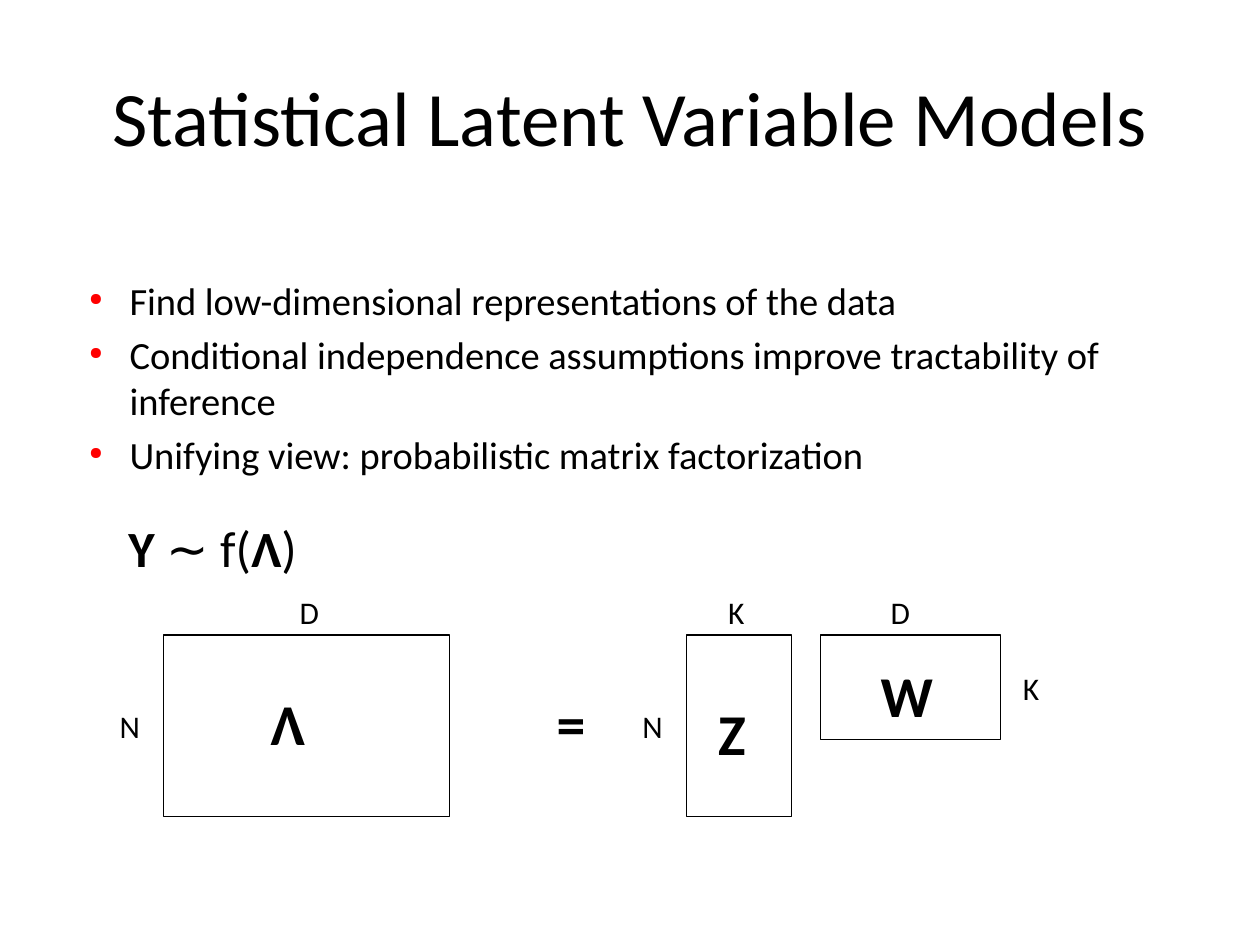
from lxml.etree import SubElement
from pptx import Presentation
from pptx.dml.color import RGBColor
from pptx.enum.shapes import MSO_SHAPE
from pptx.enum.text import MSO_ANCHOR, PP_ALIGN
from pptx.oxml.ns import qn
from pptx.util import Inches, Pt

BLACK = RGBColor(0, 0, 0)
WHITE = RGBColor(255, 255, 255)
BULLET_RED = RGBColor(255, 0, 0)
FONT = "Calibri"

POINTS = [
    "Find low-dimensional representations of the data",
    "Conditional independence assumptions improve tractability of inference",
    "Unifying view: probabilistic matrix factorization",
]
FORMULA = [("Y", True), (" ∼ f(", False), ("Λ", True), (")", False)]


def style(paragraph, size, bold=False):
    font = paragraph.font
    font.name, font.size, font.bold = FONT, Pt(size), bold
    font.color.rgb = BLACK


def add_frame(shapes, left, top, width, height):
    box = shapes.add_textbox(Inches(left), Inches(top), Inches(width), Inches(height))
    box.text_frame.word_wrap = True
    return box.text_frame


def add_title(shapes, left, top, width, height):
    frame = add_frame(shapes, left, top, width, height)
    frame.vertical_anchor = MSO_ANCHOR.MIDDLE
    title = frame.paragraphs[0]
    title.text = "Statistical Latent Variable Models"
    title.alignment = PP_ALIGN.CENTER
    style(title, 44)


def add_bullet(paragraph):
    props = paragraph._p.get_or_add_pPr()
    props.set("marL", str(Inches(0.43)))
    props.set("indent", str(Inches(-0.32)))
    color = SubElement(props, qn("a:buClr"))
    SubElement(color, qn("a:srgbClr"), val=str(BULLET_RED))
    SubElement(props, qn("a:buSzPct"), val="45000")
    SubElement(props, qn("a:buChar"), char="●")


def add_points(shapes, left, top, width, height):
    frame = add_frame(shapes, left, top, width, height)
    for index, point in enumerate(POINTS):
        paragraph = frame.add_paragraph() if index else frame.paragraphs[0]
        paragraph.text = point
        paragraph.space_after = Pt(4.4)
        style(paragraph, 22)
        add_bullet(paragraph)


def add_formula(shapes, left, top, width, height):
    formula = add_frame(shapes, left, top, width, height).paragraphs[0]
    style(formula, 29)
    for text, bold in FORMULA:
        run = formula.add_run()
        run.text = text
        run.font.bold = bold


def add_symbol(shapes, text, left, top):
    symbol = add_frame(shapes, left, top, 0.68, 0.66).paragraphs[0]
    symbol.text = text
    style(symbol, 33, bold=True)


def add_dimension(shapes, text, left, top):
    dimension = add_frame(shapes, left, top, 0.45, 0.4).paragraphs[0]
    dimension.text = text
    style(dimension, 18)


def add_matrix(shapes, box, symbol, columns, rows):
    """Each label is (text, x, y), with x and y measured from the matrix's corner."""
    left, top, width, height = box
    matrix = shapes.add_shape(MSO_SHAPE.RECTANGLE, *map(Inches, box))
    matrix.shadow.inherit = False
    matrix.fill.solid()
    matrix.fill.fore_color.rgb = WHITE
    matrix.line.color.rgb = BLACK
    matrix.line.width = Pt(0.75)
    for add_label, (text, x, y) in (
        (add_symbol, symbol), (add_dimension, columns), (add_dimension, rows)
    ):
        add_label(shapes, text, left + x, top + y)


def add_factorization(shapes, left, top):
    group = shapes.add_group_shape().shapes
    above, beside = -0.38, -0.45
    add_matrix(group, (left, top, 2.27, 1.44), ("Λ", 0.75, 0.37),
               ("D", 0.98, above), ("N", beside, 0.52))
    add_symbol(group, "=", left + 3.02, top + 0.37)
    add_matrix(group, (left + 4.15, top, 0.83, 1.44), ("Z", 0.15, 0.45),
               ("K", 0.23, above), ("N", beside, 0.52))
    add_matrix(group, (left + 5.21, top, 1.43, 0.83), ("W", 0.38, 0.15),
               ("D", 0.46, above), ("K", 1.51, 0.22))


def main():
    deck = Presentation()
    deck.slide_width, deck.slide_height = Inches(10), Inches(7.5)
    shapes = deck.slides.add_slide(deck.slide_layouts[6]).shapes
    add_title(shapes, 0.5, 0.34, 9, 1.16)
    add_points(shapes, 0.5, 2.15, 9, 5.24)
    add_formula(shapes, 0.92, 4.05, 1.81, 0.58)
    add_factorization(shapes, 1.3, 5.04)
    deck.save("out.pptx")


if __name__ == "__main__":
    main()
